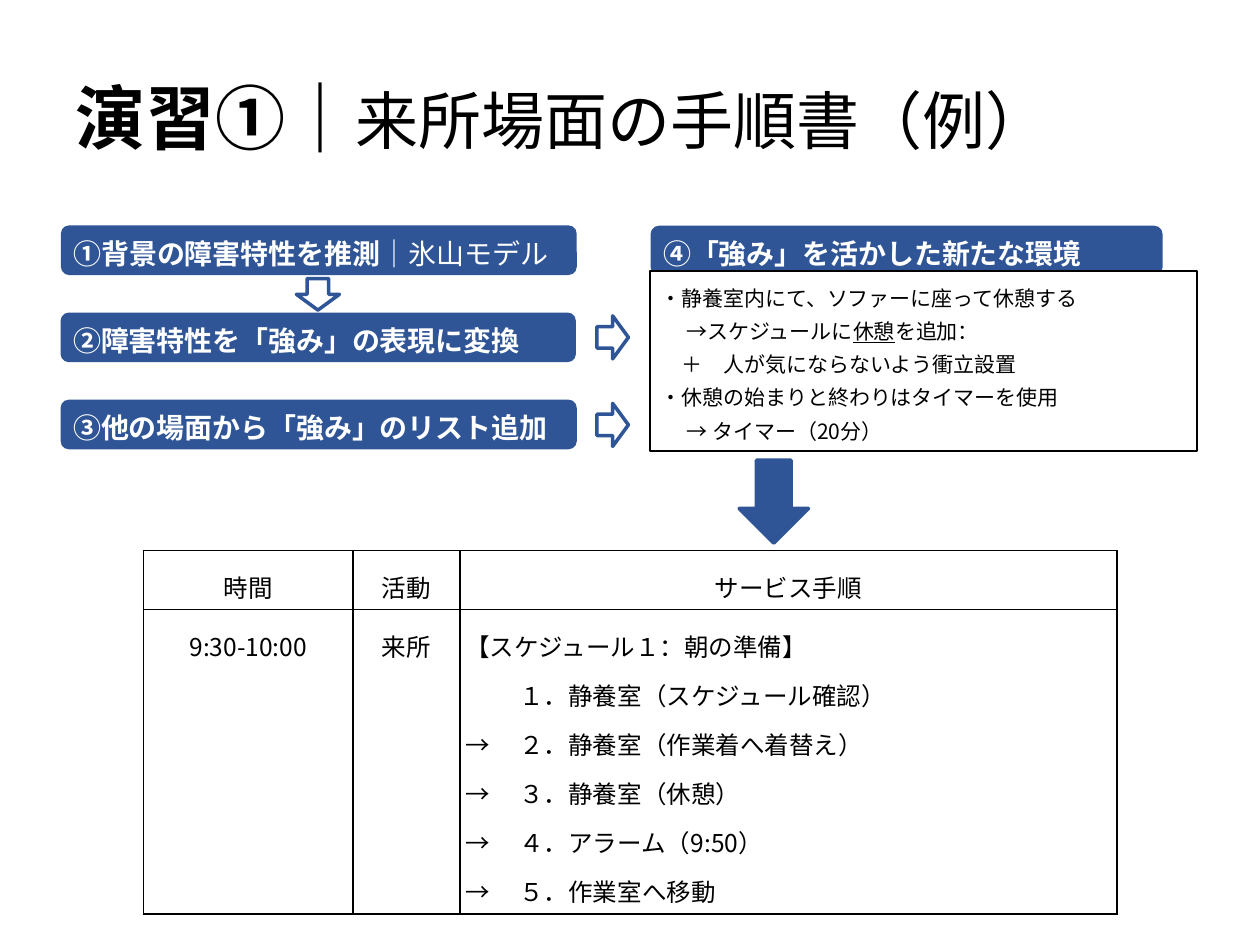
from dataclasses import dataclass

from lxml.etree import SubElement
from pptx import Presentation
from pptx.dml.color import RGBColor
from pptx.enum.shapes import MSO_SHAPE
from pptx.enum.text import MSO_ANCHOR, PP_ALIGN
from pptx.oxml.ns import qn
from pptx.util import Pt


@dataclass(frozen=True)
class Theme:
    font: str = "Noto Sans CJK JP"
    blue: RGBColor = RGBColor(0x2F, 0x55, 0x97)
    black: RGBColor = RGBColor(0, 0, 0)
    white: RGBColor = RGBColor(255, 255, 255)
    title: int = 40
    subtitle: int = 36
    step: int = 16
    table: int = 14
    note: int = 12


theme = Theme()


def write_text(frame, paragraphs, size, color, line=None, align=PP_ALIGN.LEFT):
    """Each paragraph is (left margin, first-line indent, [(text, run format)])."""
    for index, (margin, indent, runs) in enumerate(paragraphs):
        paragraph = frame.add_paragraph() if index else frame.paragraphs[0]
        paragraph.alignment = align
        if line:
            paragraph.line_spacing = Pt(line)
        properties = paragraph._p.get_or_add_pPr()
        properties.set("marL", str(Pt(margin)))
        properties.set("indent", str(Pt(indent)))
        for text, changes in runs:
            run = paragraph.add_run()
            run.text = text
            run.font.color.rgb = color
            formats = {"name": theme.font, "size": Pt(size), **changes}
            for name, value in formats.items():
                setattr(run.font, name, value)
            SubElement(run._r.get_or_add_rPr(), qn("a:ea"), typeface=theme.font)


def add_block(kind, box, fill=None, line=None, width=2):
    shape = slide.shapes.add_shape(kind, *map(Pt, box))
    shape.shadow.inherit = False
    if fill is None:
        shape.fill.background()
    else:
        shape.fill.solid()
        shape.fill.fore_color.rgb = fill
    if line is None:
        shape.line.fill.background()
    else:
        shape.line.color.rgb = line
        shape.line.width = Pt(width)
    return shape


presentation = Presentation()
presentation.slide_width, presentation.slide_height = Pt(720), Pt(540)
slide = presentation.slides.add_slide(presentation.slide_layouts[6])
bold = {"bold": True}

# Title
title = slide.shapes.add_textbox(Pt(36), Pt(21.6), Pt(648), Pt(90)).text_frame
title.word_wrap = True
title.vertical_anchor = MSO_ANCHOR.MIDDLE
title_runs = [("演習①｜", bold),
              ("来所場面の手順書（例）", {"size": Pt(theme.subtitle)})]
write_text(title, [(0, 0, title_runs)], theme.title, theme.black)

# Procedure table
column_widths = (119.7, 61.2, 375.4)
row_heights = (33.7, 173.8)
table = slide.shapes.add_table(2, 3, Pt(82), Pt(314.6), Pt(sum(column_widths)),
                               Pt(sum(row_heights))).table
for column, width in zip(table.columns, column_widths):
    column.width = Pt(width)
for row, height in zip(table.rows, row_heights):
    row.height = Pt(height)

steps = ["静養室（スケジュール確認）", "静養室（作業着へ着替え）", "静養室（休憩）",
         "アラーム（9:50）", "作業室へ移動"]
number_indent = 31
procedure = [(0, 0, [("【スケジュール１：朝の準備】", {})])]
for number, step in zip("１２３４５", steps):
    first = number == "１"
    arrow = "" if first else "→\t"
    procedure.append((number_indent, 0 if first else -number_indent,
                      [(f"{arrow}{number}．{step}", {})]))

cell_rows = [[[(0, 0, [(text, {})])] for text in ("時間", "活動", "サービス手順")],
             [[(0, 0, [("9:30-10:00", {})])], [(0, 0, [("来所", {})])], procedure]]
for row_index, row in enumerate(cell_rows):
    for column_index, paragraphs in enumerate(row):
        cell = table.cell(row_index, column_index)
        cell.vertical_anchor = MSO_ANCHOR.TOP if row_index else MSO_ANCHOR.MIDDLE
        for side in ("left", "right", "top", "bottom"):
            setattr(cell, f"margin_{side}", Pt(2.9))
        align = PP_ALIGN.JUSTIFY if paragraphs is procedure else PP_ALIGN.CENTER
        write_text(cell.text_frame, paragraphs, theme.table, theme.black, 28, align)
        cell_properties = cell._tc.get_or_add_tcPr()
        for edge in ("a:lnL", "a:lnR", "a:lnT", "a:lnB"):
            border = SubElement(cell_properties, qn(edge), w=str(Pt(1)))
            border_fill = SubElement(border, qn("a:solidFill"))
            SubElement(border_fill, qn("a:srgbClr"), val=str(theme.black))
        cell.fill.background()

# Numbered step bars
bars = [
    (34.6, 228.4, 295, [("③他の場面から「強み」のリスト追加", bold)]),
    (34.8, 128.8, 294.8, [("①背景の障害特性を推測", bold), ("｜氷山モデル", {})]),
    (34.6, 178.6, 294.5, [("②障害特性を「強み」の表現に変換", bold)]),
    (371.8, 129, 292.6, [("④「強み」を活かした新たな環境", bold)]),
]
for left, top, width, runs in bars:
    bar = add_block(MSO_SHAPE.ROUNDED_RECTANGLE, (left, top, width, 28.4), theme.blue)
    frame = bar.text_frame
    margins = {"margin_left": 5.8, "margin_right": 5.8,
               "margin_top": 2.9, "margin_bottom": 3.6}
    for name, value in margins.items():
        setattr(frame, name, Pt(value))
    frame.word_wrap = True
    frame.vertical_anchor = MSO_ANCHOR.MIDDLE
    write_text(frame, [(0, 0, runs)], theme.step, theme.white, 23)

# Notes on the new environment
note = add_block(MSO_SHAPE.RECTANGLE, (371.5, 154.8, 312.5, 103),
                 theme.white, theme.black, 1.5).text_frame
for name, value in {"margin_left": 5.8, "margin_right": 5.8,
                    "margin_top": 3.6, "margin_bottom": 3.6}.items():
    setattr(note, name, Pt(value))
note.word_wrap = True
note.vertical_anchor = MSO_ANCHOR.TOP
note_lines = [
    (0, 0, [("・静養室内にて、ソファーに座って休憩する", {})]),
    (15, 0, [("→スケジュールに", {}), ("休憩", {"underline": True}), ("を追加：", {})]),
    (12, 0, [("＋　人が気にならないよう衝立設置", {})]),
    (0, 0, [("・休憩の始まりと終わりはタイマーを使用", {})]),
    (15, 0, [("→ タイマー（20分）", {})]),
]
write_text(note, note_lines, theme.note, theme.black, 19)

# Flow arrows
arrows = [
    ((169.4, 159.2, 24.6, 18), 0, None),
    ((337.8, 183.8, 24.6, 18), 270, None),
    ((337.8, 233.8, 24.6, 18), 270, None),
    ((422.4, 263, 39.6, 47.4), 0, theme.blue),
]
for box, rotation, fill in arrows:
    add_block(MSO_SHAPE.DOWN_ARROW, box, fill, theme.blue).rotation = rotation

presentation.save("out.pptx")
